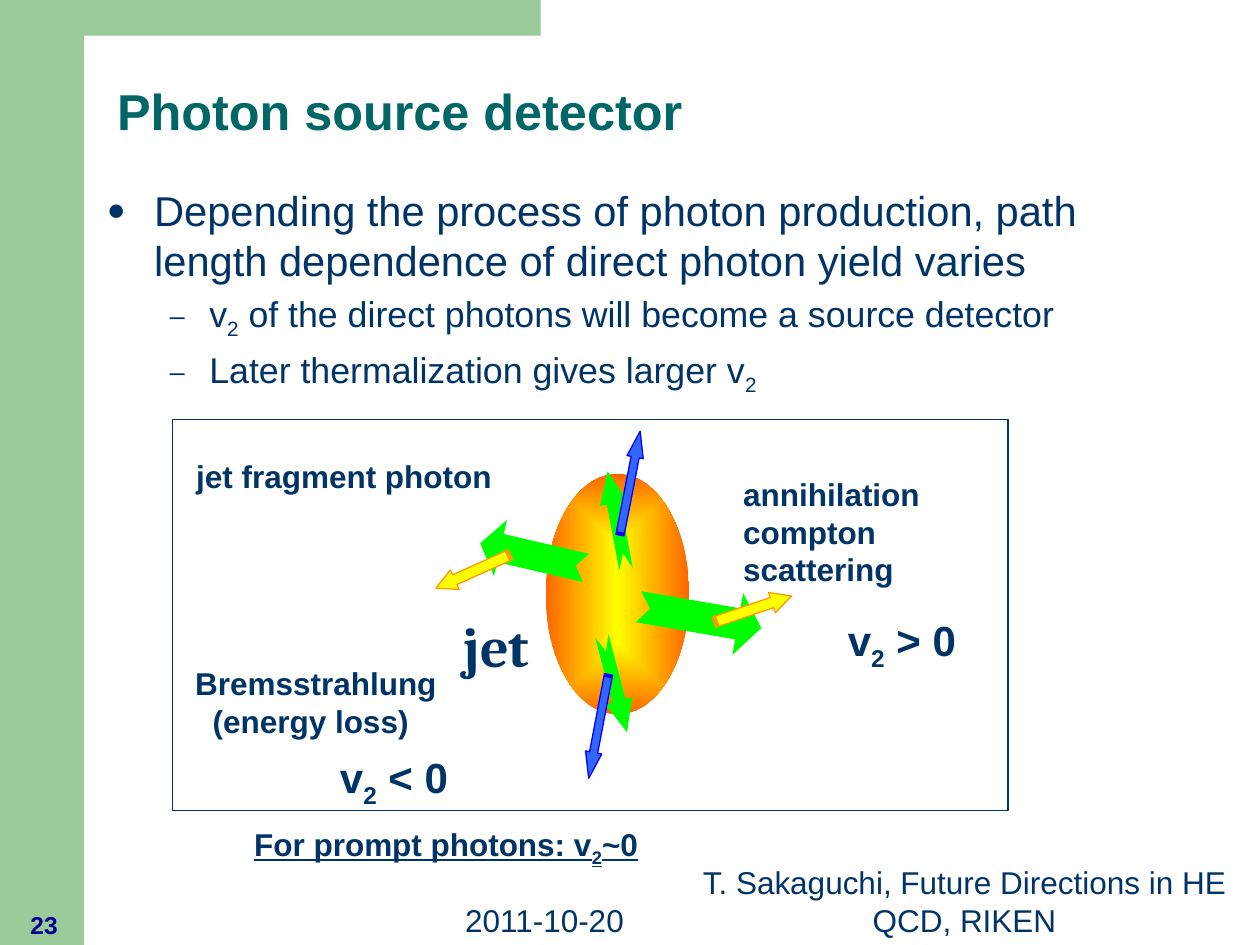
from pptx import Presentation
from pptx.dml.color import RGBColor
from pptx.enum.shapes import MSO_SHAPE
from pptx.enum.text import MSO_ANCHOR, PP_ALIGN
from pptx.oxml import parse_xml
from pptx.oxml.ns import nsdecls, qn
from pptx.util import Pt

RECTANGLE, OVAL = MSO_SHAPE.RECTANGLE, MSO_SHAPE.OVAL
NOTCHED, STRIPED = MSO_SHAPE.NOTCHED_RIGHT_ARROW, MSO_SHAPE.STRIPED_RIGHT_ARROW
TOP, BOTTOM = MSO_ANCHOR.TOP, MSO_ANCHOR.BOTTOM
LEFT, CENTER, RIGHT = PP_ALIGN.LEFT, PP_ALIGN.CENTER, PP_ALIGN.RIGHT

COLORS = {
    "band": "99CC99", "title": "006666", "text": "003366", "number": "000090",
    "core": "FFFF00", "rim": "FF6600", "jet": "00FF00",
    "yellow": "FFFF00", "yellow edge": "FF9900",
    "blue": "3366FF", "blue edge": "0000FF",
}


def rgb(name):
    return RGBColor.from_string(COLORS[name])


def add_block(shapes, kind, frame, fill=None, line=None, turn=0, adjust=()):
    """Add a preset shape; frame is left, top, width, height in points."""
    block = shapes.add_shape(kind, *map(Pt, frame))
    block.shadow.inherit = False
    block.rotation = turn
    for index, value in enumerate(adjust):
        block.adjustments[index] = value
    if fill:
        block.fill.solid()
        block.fill.fore_color.rgb = rgb(fill)
    else:
        block.fill.background()
    if line:
        block.line.color.rgb = rgb(line)
        block.line.width = Pt(0.75)
    else:
        block.line.fill.background()
    return block


def add_fireball(shapes, frame):
    """Add the ellipse with a gradient running from its core to its rim."""
    ball = add_block(shapes, OVAL, frame)
    ball.fill.gradient()
    for stop, name, position in zip(ball.fill.gradient_stops, ("core", "rim"), (0, 1)):
        stop.color.rgb = rgb(name)
        stop.position = position
    gradient = ball._element.spPr.find(qn("a:gradFill"))
    gradient.remove(gradient.find(qn("a:lin")))
    gradient.append(parse_xml(
        f'<a:path {nsdecls("a")} path="shape">'
        '<a:fillToRect l="50000" t="50000" r="50000" b="50000"/></a:path>'))


def add_box(shapes, frame, anchor=TOP):
    """Add an empty wrapping text box and return its text frame."""
    box = shapes.add_textbox(*map(Pt, frame)).text_frame
    box.word_wrap = True
    box.vertical_anchor = anchor
    return box


def write(box, text, size=18, color="text", font="Arial", bold=False, underline=False,
          align=LEFT, before=0, spacing=None, margin=0, hang=0, bullet=None):
    """Write one paragraph; text between bars is set as subscript."""
    first = not box.paragraphs[0].runs
    para = box.paragraphs[0] if first else box.add_paragraph()
    para.alignment = align
    para.space_before = Pt(0 if first else before)
    if spacing:
        para.line_spacing = spacing
    properties = para._p.get_or_add_pPr()
    properties.set("marL", str(Pt(margin)))
    properties.set("indent", str(Pt(-hang)))
    if bullet:
        for xml in (f'<a:buClr {nsdecls("a")}><a:srgbClr val="{COLORS[color]}"/></a:buClr>',
                    f'<a:buSzPct {nsdecls("a")} val="75000"/>',
                    f'<a:buFont {nsdecls("a")} typeface="{font}"/>',
                    f'<a:buChar {nsdecls("a")} char="{bullet}"/>'):
            properties.append(parse_xml(xml))
    for index, piece in enumerate(text.split("|")):
        if not piece:
            continue
        span = para.add_run()
        span.text = piece
        span.font.name = font
        span.font.size = Pt(size)
        span.font.bold = bold
        span.font.underline = underline
        span.font.color.rgb = rgb(color)
        if index % 2:
            span.font._element.set("baseline", "-25000")


def add_label(shapes, frame, *lines, anchor=TOP, **style):
    """Add a text box holding lines of one style."""
    box = add_box(shapes, frame, anchor)
    for line in lines:
        write(box, line, **style)
    return box


def add_body(shapes):
    """Add the bulleted statement and its two sub-points."""
    box = add_box(shapes, (54, 102.2, 605.5, 108))
    write(box, "Depending the process of photon production, path length dependence "
          "of direct photon yield varies", size=23.8, margin=27, hang=27, bullet="●")
    for text in ("v|2| of the direct photons will become a source detector",
                 "Later thermalization gives larger v|2|"):
        write(box, text, size=20.4, before=4.1, margin=58.5, hang=22.5, bullet="–")


def add_diagram(shapes):
    """Add the framed collision drawing with its arrows and labels."""
    add_block(shapes, RECTANGLE, (98.6, 239.8, 477.4, 223.2), line="text")
    add_fireball(shapes, (311.8, 270.7, 82, 137.5))
    for frame, turn, head in (
            ((273.6, 301, 62, 33), 193.1, 0.36),
            ((324, 289.4, 57, 15.8), 259.3, 1.18),
            ((364.3, 334.8, 71.3, 36), 9.8, 0.38),
            ((322.6, 383, 57, 15.8), 75.4, 1.18)):
        add_block(shapes, NOTCHED, frame, "jet", turn=turn, adjust=(0.5, head))
    for left, top, turn, color in (
            (247, 320.4, 155.8, "yellow"), (311.8, 410.4, 100.8, "blue"),
            (406.8, 342, 341.3, "yellow"), (329.8, 271.4, 281, "blue")):
        width, height, head = (46.8, 12.2, 0.97) if color == "yellow" else (60.5, 9.4, 1.6)
        add_block(shapes, STRIPED, (left, top, width, height), color, color + " edge",
                  turn, (0.5, head))
    add_label(shapes, (417.6, 267.8, 148.3, 72.7),
              "annihilation", "compton", "scattering", bold=True)
    loss = add_label(shapes, (104.4, 375.8, 164.9, 51), "Bremsstrahlung", bold=True)
    write(loss, "(energy loss)", bold=True, margin=10)
    add_label(shapes, (257.8, 345.6, 58.3, 46), "jet", size=32, font="Cambria", bold=True)
    add_label(shapes, (105, 257.8, 202.3, 28.8), "jet fragment photon", bold=True)
    for left, top, text in ((477.4, 347.8, "v|2| > 0"), (187.2, 426.2, "v|2| < 0")):
        add_label(shapes, (left, top, 83.5, 36), text, size=24, bold=True)


def main():
    deck = Presentation()
    deck.slide_width, deck.slide_height = Pt(720), Pt(540)
    page = deck.slides.add_slide(deck.slide_layouts[6])
    shapes = page.shapes
    add_block(shapes, RECTANGLE, (0, 0, 48.2, 540), "band")
    add_block(shapes, RECTANGLE, (2.9, 0, 306, 20.4), "band")
    add_label(shapes, (195.8, 513.4, 167.8, 26.6), "2011-10-20", anchor=BOTTOM, align=RIGHT)
    add_label(shapes, (382.3, 513.4, 337.7, 26.6),
              "T. Sakaguchi, Future Directions in HE QCD, RIKEN", anchor=BOTTOM, align=CENTER)
    add_label(shapes, (2.2, 502.6, 46, 38), "23", anchor=BOTTOM, size=14, color="number",
              bold=True, align=CENTER)
    add_label(shapes, (59.8, 44.6, 607, 39.6), "Photon source detector", anchor=BOTTOM,
              size=28.8, color="title", bold=True, spacing=0.9)
    add_body(shapes)
    add_diagram(shapes.add_group_shape().shapes)
    add_label(shapes, (138.2, 468, 240.5, 28.8), "For prompt photons: v|2|~0",
              bold=True, underline=True)
    deck.save("out.pptx")


if __name__ == "__main__":
    main()
